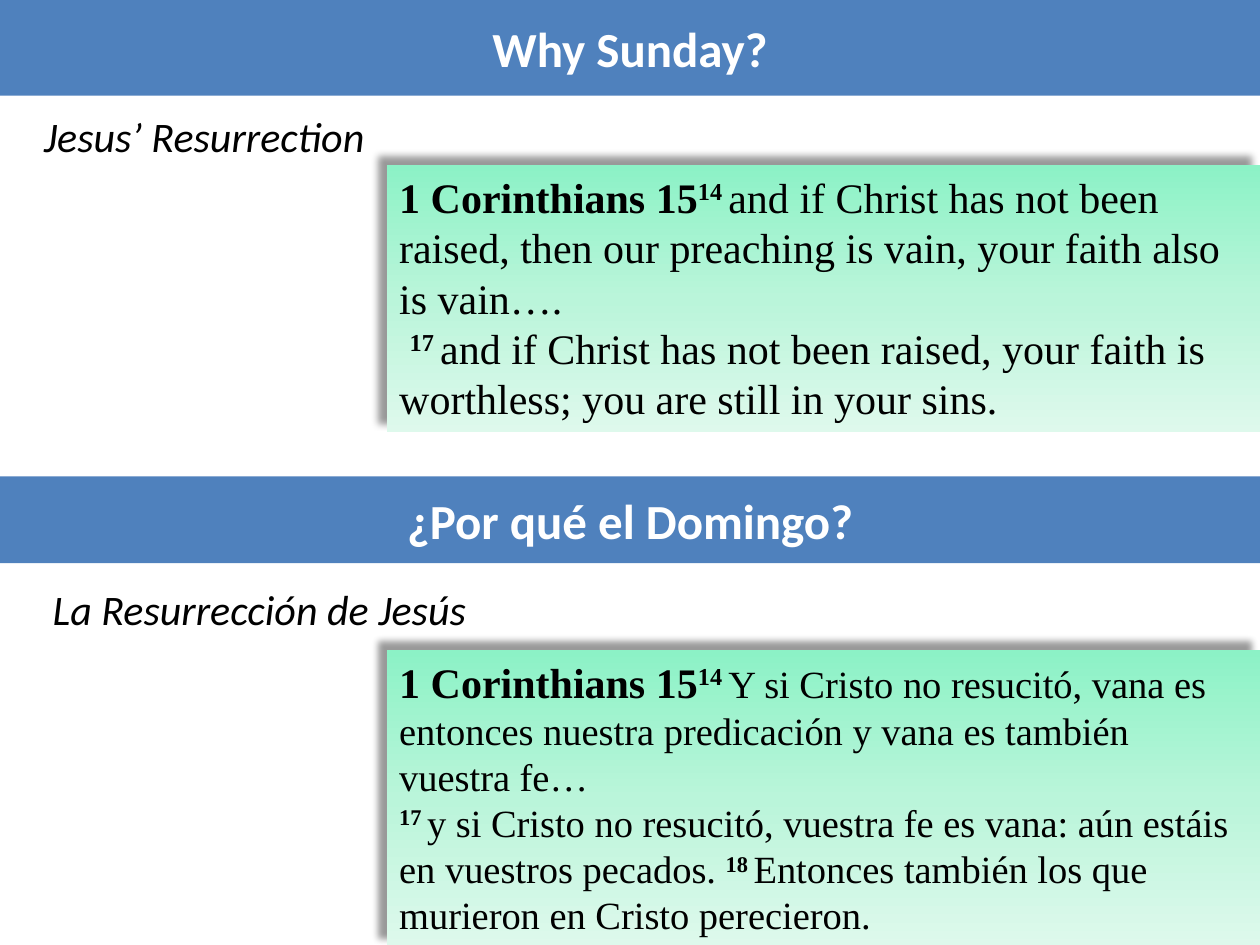
from copy import deepcopy
from lxml import etree
from pptx import Presentation
from pptx import util as u
from pptx.dml.color import RGBColor
from pptx.enum import shapes, text
from pptx.oxml import ns

BLUE = RGBColor(0x4F, 0x81, 0xBD)
WHITE = RGBColor(0xFF, 0xFF, 0xFF)
BLACK = RGBColor(0, 0, 0)
MINT = [(0, RGBColor(0x8C, 0xF2, 0xC6)), (0.5, RGBColor(0xBA, 0xF5, 0xDA)),
        (1, RGBColor(0xDE, 0xF9, 0xEC))]

deck = Presentation()
deck.slide_width, deck.slide_height = u.Inches(10), u.Inches(7.5)
page = deck.slides.add_slide(deck.slide_layouts[5])


def place(box, left, top, width, height):
    box.left, box.top = u.Inches(left), u.Inches(top)
    box.width, box.height = u.Inches(width), u.Inches(height)


def add_span(para, words, color, baseline=0, **formats):
    span = para.add_run()
    span.text = words
    span.font.color.rgb = color
    for name, value in formats.items():
        setattr(span.font, name, value)
    if baseline:
        span._r.get_or_add_rPr().set("baseline", str(baseline * 1000))


banner_format = {"name": "Calibri", "size": u.Pt(28), "bold": True}
subtitle_format = {"name": "Calibri", "size": u.Pt(24), "italic": True}

lower_banner = page.shapes.add_shape(shapes.MSO_SHAPE.RECTANGLE, 0, 0, 0, 0)
banners = [(page.shapes.title, "Why Sunday?", 0, 0.76),
           (lower_banner, "¿Por qué el Domingo?", 3.78, 0.69)]
for box, words, top, height in banners:
    place(box, 0, top, 10, height)
    box.fill.solid()
    box.fill.fore_color.rgb = BLUE
    box.line.fill.background()
    box.shadow.inherit = False
    frame = box.text_frame
    frame.auto_size = text.MSO_AUTO_SIZE.NONE
    frame.vertical_anchor = text.MSO_ANCHOR.MIDDLE
    para = frame.paragraphs[0]
    para.alignment = text.PP_ALIGN.CENTER
    add_span(para, words, WHITE, **banner_format)

subtitles = [("Jesus’ Resurrection", 0.25, 0.83, 9.17, True),
             ("La Resurrección de Jesús", 0.32, 4.58, 3.56, False)]
for words, left, top, width, wrap in subtitles:
    box = page.shapes.add_textbox(0, 0, 0, 0)
    place(box, left, top, width, 0.5)
    box.text_frame.word_wrap = wrap
    box.text_frame.auto_size = text.MSO_AUTO_SIZE.SHAPE_TO_FIT_TEXT
    add_span(box.text_frame.paragraphs[0], words, BLACK, **subtitle_format)

HEADING = ("1 Corinthians 15", True, 0, 24)
HEADING_VERSE = ("14 ", True, 30, 24)
verses = [
    (1.31, 2.12, [
        [HEADING, HEADING_VERSE,
         ("and if Christ has not been raised, then our preaching is vain, "
          "your faith also is vain….", False, 0, 24)],
        [(" ", False, 0, 24), ("17 ", True, 30, 24),
         ("and if Christ has not been raised, your faith is worthless; "
          "you are still in your sins.", False, 0, 24)]]),
    (5.16, 2.36, [
        [HEADING, HEADING_VERSE,
         ("Y si Cristo no resucitó, vana es entonces nuestra predicación "
          "y vana es también vuestra fe… ", False, 0, 22)],
        [("17 ", True, 30, 22),
         ("y si Cristo no resucitó, vuestra fe es vana: aún estáis en "
          "vuestros pecados. ", False, 0, 22),
         ("18 ", True, 30, 22),
         ("Entonces también los que murieron en Cristo perecieron.",
          False, 0, 22)]]),
]
for top, height, paragraphs in verses:
    box = page.shapes.add_shape(shapes.MSO_SHAPE.RECTANGLE, 0, 0, 0, 0)
    place(box, 3.07, top, 6.93, height)
    box.fill.gradient()
    box.fill.gradient_angle = 270
    first_stop = box._element.spPr.find(".//" + ns.qn("a:gs"))
    first_stop.addnext(deepcopy(first_stop))
    for stop, (position, color) in zip(box.fill.gradient_stops, MINT):
        stop.position = position
        stop.color.rgb = color
    box.line.fill.background()

    box.shadow.inherit = False
    effects = box._element.spPr.find(ns.qn("a:effectLst"))
    shadow = etree.SubElement(
        effects, ns.qn("a:outerShdw"), blurRad=str(u.Pt(4)), dist=str(u.Pt(7)),
        dir=str(225 * 60000), algn="br", rotWithShape="0")
    shade = etree.SubElement(shadow, ns.qn("a:srgbClr"), val=str(BLACK))
    etree.SubElement(shade, ns.qn("a:alpha"), val="40000")

    frame = box.text_frame
    frame.word_wrap = True
    frame.auto_size = text.MSO_AUTO_SIZE.SHAPE_TO_FIT_TEXT
    frame.vertical_anchor = text.MSO_ANCHOR.TOP
    for index, spans in enumerate(paragraphs):
        para = frame.add_paragraph() if index else frame.paragraphs[0]
        para.alignment = text.PP_ALIGN.LEFT
        for words, bold, baseline, size in spans:
            add_span(para, words, BLACK, baseline, name="Times New Roman",
                     size=u.Pt(size), bold=bold)

deck.save("out.pptx")
